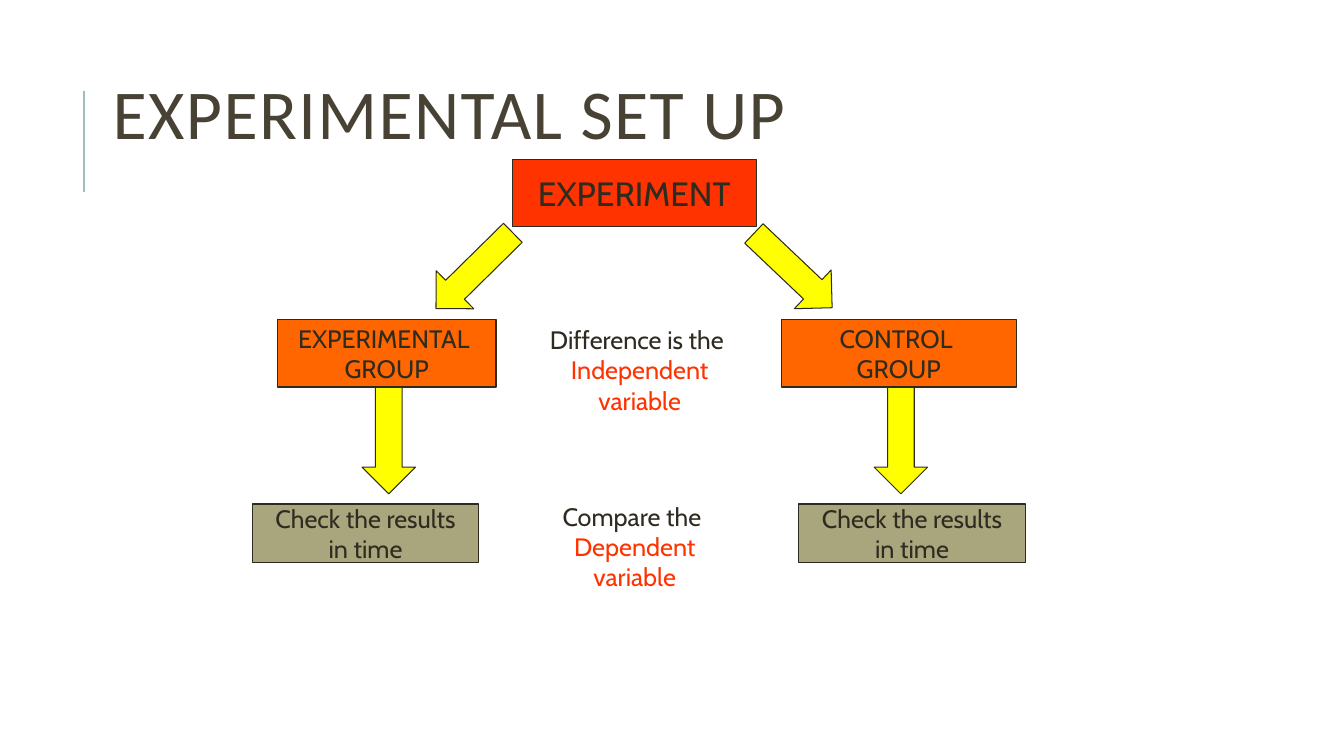
from pptx import Presentation
from pptx.dml.color import RGBColor
from pptx.enum import shapes, text
from pptx.oxml.ns import qn
from pptx.util import Inches, Pt

INK, RED, ORANGE, OLIVE, YELLOW = "2E2B21", "FF3300", "FF6600", "A9A57C", "FFFF00"


def paint(target, color):
    """Give a fill, or the fill of a line, one solid colour."""
    target.solid()
    target.fore_color.rgb = RGBColor.from_string(color)


def write(box, lines, size, font="Cabin", align=text.PP_ALIGN.CENTER):
    """Write (words, colour) lines as paragraphs and return the last one."""
    frame = box.text_frame
    for index, (words, color) in enumerate(lines):
        para = frame.paragraphs[0] if index == 0 else frame.add_paragraph()
        para.text = words
        para.alignment = align
        para.font.name = font
        para.font.size = Pt(size)
        para.font.color.rgb = RGBColor.from_string(color)
    return para


def add_outlined(page, kind, place, color):
    """Add a filled preset shape with a thin dark outline."""
    shape = page.shapes.add_shape(kind, *map(Inches, place))
    shape.shadow.inherit = False
    paint(shape.fill, color)
    paint(shape.line.fill, INK)
    shape.line.width = Pt(0.75)
    return shape


def add_step(page, place, color, lines, size=18):
    """Add a labelled rectangle of the diagram."""
    box = add_outlined(page, shapes.MSO_SHAPE.RECTANGLE, place, color)
    box.text_frame.word_wrap = False
    box.text_frame.vertical_anchor = text.MSO_ANCHOR.MIDDLE
    write(box, [(words, INK) for words in lines], size)


def add_arrow(page, left, top, angle):
    """Add a yellow block arrow turned by an angle."""
    place = (left, top, 1.07, 0.53)
    arrow = add_outlined(page, shapes.MSO_SHAPE.RIGHT_ARROW, place, YELLOW)
    arrow.rotation = angle


def add_note(page, place, lead, variable):
    """Add a text note that names a variable in red."""
    box = page.shapes.add_textbox(*map(Inches, place))
    box.text_frame.word_wrap = True
    write(box, [(lead, INK), (variable, RED)], 18)


def add_title(page, words):
    """Add the spaced title and the vertical rule beside it."""
    rule = page.shapes.add_connector(
        shapes.MSO_CONNECTOR.STRAIGHT,
        Inches(0.83), Inches(1.9), Inches(0.83), Inches(0.9))
    paint(rule.line.fill, "9CBEBD")
    rule.line.width = Pt(1.5)
    properties = rule._element.spPr
    properties.append(properties.makeelement(qn("a:effectLst"), {}))

    box = page.shapes.add_textbox(*map(Inches, (1.02, 0.36, 10.63, 1.64)))
    box.text_frame.word_wrap = True
    box.text_frame.vertical_anchor = text.MSO_ANCHOR.MIDDLE
    para = write(box, [(words, "474233")], 50, "Calibri", text.PP_ALIGN.LEFT)
    para.line_spacing = 0.8
    para.runs[0]._r.get_or_add_rPr().set("spc", "100")


def main():
    """Build the experiment diagram and save it."""
    deck = Presentation()
    deck.slide_width, deck.slide_height = Inches(13.33), Inches(7.5)
    page = deck.slides.add_slide(deck.slide_layouts[6])

    add_title(page, "EXPERIMENTAL SET UP")
    for left, top, angle in [(8.4, 4.1, 90), (3.32, 4.1, 90),
                             (4.17, 2.42, 135.4), (7.33, 2.42, 43.5)]:
        add_arrow(page, left, top, angle)

    add_step(page, (5.08, 1.58, 2.42, 0.67), RED, ["EXPERIMENT"], 24)
    add_step(page, (2.75, 3.17, 2.17, 0.67), ORANGE, ["EXPERIMENTAL ", "GROUP"])
    add_step(page, (7.75, 3.17, 2.33, 0.67), ORANGE, ["CONTROL ", "GROUP"])
    for left in (2.5, 7.92):
        add_step(page, (left, 5, 2.25, 0.58), OLIVE, ["Check the results", "in time"])

    add_note(page, (5.16, 3.17, 2.37, 0.71), "Difference is the ", "Independent variable")
    add_note(page, (5.19, 4.92, 2.21, 1.01), "Compare the ", "Dependent variable")
    deck.save("out.pptx")


if __name__ == "__main__":
    main()
